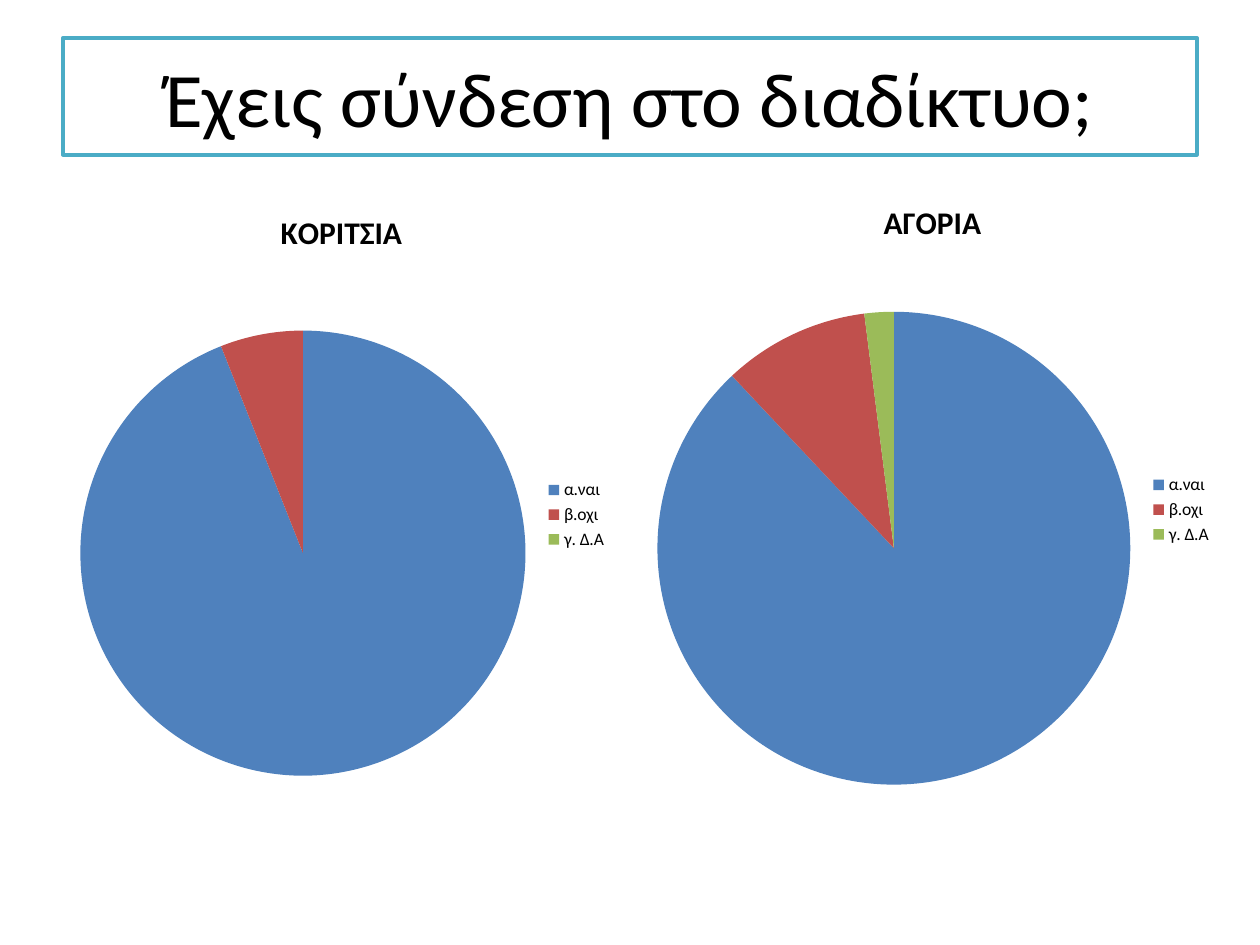
from pptx import Presentation
from pptx.chart.data import CategoryChartData
from pptx.dml.color import RGBColor
from pptx.enum.chart import XL_CHART_TYPE, XL_LEGEND_POSITION
from pptx.enum.shapes import MSO_SHAPE
from pptx.enum.text import MSO_ANCHOR, PP_ALIGN
from pptx.util import Inches, Pt

PIE = XL_CHART_TYPE.PIE
RIGHT = XL_LEGEND_POSITION.RIGHT
RECT = MSO_SHAPE.RECTANGLE
MIDDLE = MSO_ANCHOR.MIDDLE
CENTER = PP_ALIGN.CENTER

FONT = "Calibri"
BLACK, WHITE, TEAL = "000000", "FFFFFF", "4BACC6"
SLICE_COLORS = ["4F81BD", "C0504D", "9BBB59"]

QUESTION = "Έχεις σύνδεση στο διαδίκτυο;"
ANSWERS = ["α.ναι", "β.οχι", "γ. Δ.Α"]
PIES = [
    ("ΚΟΡΙΤΣΙΑ", (94, 6, 0), (0.5, 1.47, 4.42, 5.23)),
    ("ΑΓΟΡΙΑ", (88, 10, 2), (5.08, 1.39, 4.64, 5.31)),
]


def rgb(value):
    return RGBColor.from_string(value)


def set_font(font, size, bold=False):
    font.name = FONT
    font.size = Pt(size)
    font.bold = bold
    font.color.rgb = rgb(BLACK)


def add_heading(s):
    sp = s.shapes.add_shape(RECT, Inches(0.5), Inches(0.3), Inches(9), Inches(0.93))
    sp.shadow.inherit = False
    sp.fill.solid()
    sp.fill.fore_color.rgb = rgb(WHITE)
    sp.line.color.rgb = rgb(TEAL)
    sp.line.width = Pt(2)
    tf = sp.text_frame
    tf.word_wrap = True
    tf.vertical_anchor = MIDDLE
    p = tf.paragraphs[0]
    p.text = QUESTION
    p.alignment = CENTER
    set_font(p.font, 44)


def add_pie(s, title, values, box):
    data = CategoryChartData()
    data.categories = ANSWERS
    data.add_series("Series 1", values)
    chart = s.shapes.add_chart(PIE, *map(Inches, box), data).chart
    set_font(chart.font, 10)
    chart.has_title = True
    p = chart.chart_title.text_frame.paragraphs[0]
    p.text = title
    set_font(p.font, 18, bold=True)
    chart.chart_title.include_in_layout = False
    chart.has_legend = True
    chart.legend.position = RIGHT
    chart.legend.include_in_layout = False
    plot = chart.plots[0]
    plot.vary_by_categories = True
    for i, color in enumerate(SLICE_COLORS):
        fill = plot.series[0].points[i].format.fill
        fill.solid()
        fill.fore_color.rgb = rgb(color)


def main():
    prs = Presentation()
    prs.slide_width, prs.slide_height = Inches(10), Inches(7.5)
    s = prs.slides.add_slide(prs.slide_layouts[6])
    add_heading(s)
    for title, values, box in PIES:
        add_pie(s, title, values, box)
    prs.save("out.pptx")


if __name__ == "__main__":
    main()
